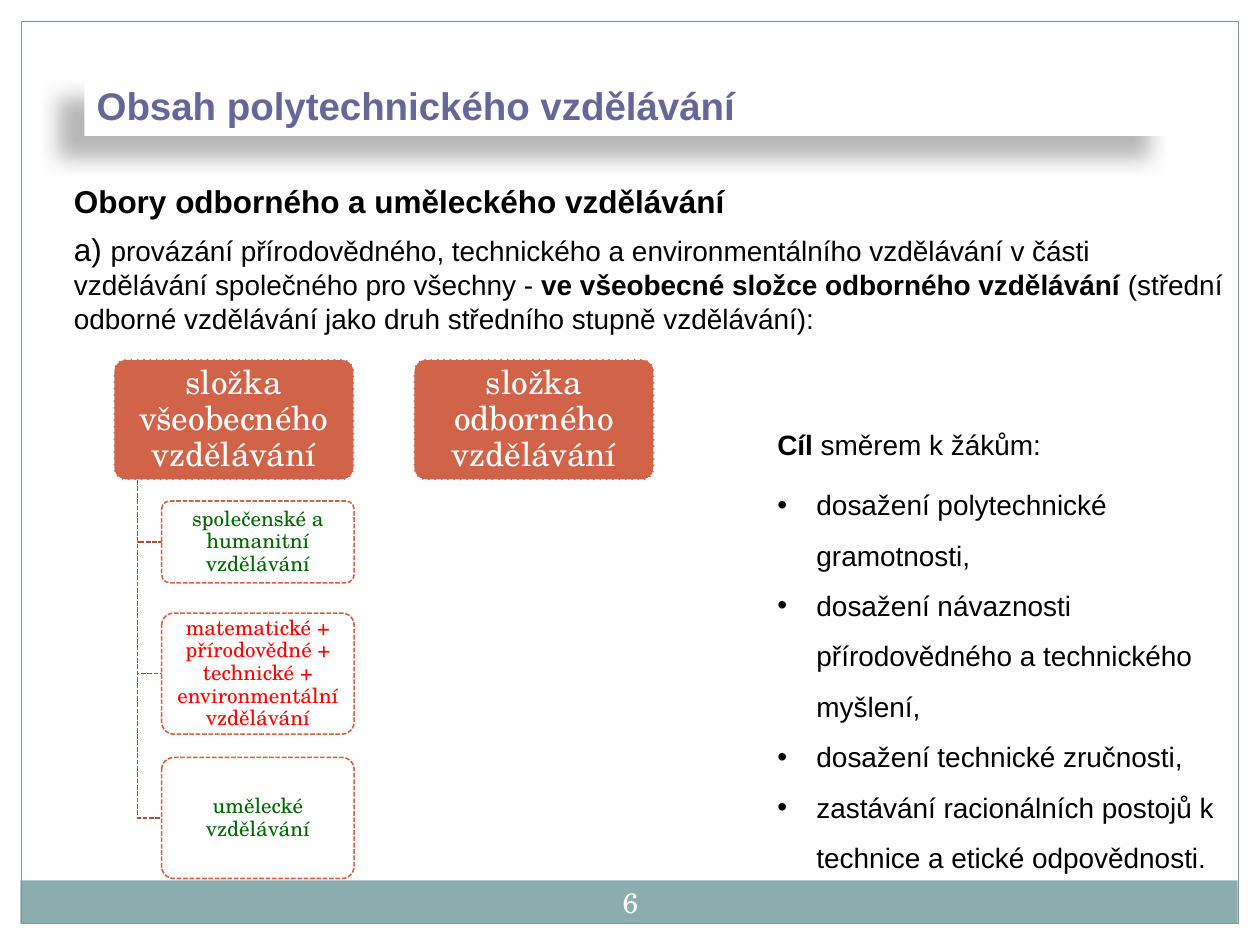
import dataclasses

import lxml.etree
import pptx
import pptx.dml.color
import pptx.enum.dml
import pptx.enum.shapes
import pptx.enum.text
import pptx.oxml.ns
import pptx.util

Cm = pptx.util.Cm
Pt = pptx.util.Pt
SHAPES = pptx.enum.shapes.MSO_SHAPE
ALIGN = pptx.enum.text.PP_ALIGN
ANCHOR = pptx.enum.text.MSO_ANCHOR
DASH = pptx.enum.dml.MSO_LINE.SQUARE_DOT
qn = pptx.oxml.ns.qn


@dataclasses.dataclass(frozen=True)
class Theme:
    sans: str = "Arial"
    serif: str = "TeX Gyre Schola"
    white: str = "FFFFFF"
    ink: str = "000000"
    title: str = "666699"
    band: str = "8CADAE"
    frame: str = "7C999A"
    accent: str = "D16349"
    branch: str = "A74F3A"
    general: str = "006600"
    highlight: str = "FF0000"
    title_size: int = 22
    heading_size: int = 18
    body_size: int = 16
    component_size: int = 19
    subject_size: int = 12


THEME = Theme()


def rgb(value):
    return pptx.dml.color.RGBColor.from_string(value)


def paint(shape, fill=None, line=None, width=0.75, dash=None):
    shape.shadow.inherit = False
    if fill:
        shape.fill.solid()
        shape.fill.fore_color.rgb = rgb(fill)
    else:
        shape.fill.background()
    if line:
        shape.line.color.rgb = rgb(line)
        shape.line.width = Pt(width)
        shape.line.dash_style = dash
    else:
        shape.line.fill.background()


def add_panel(slide, box, **look):
    panel = slide.shapes.add_shape(SHAPES.RECTANGLE, *map(Cm, box))
    paint(panel, **look)
    return panel


def set_frame(shape, anchor=ANCHOR.TOP, margins=(0.25, 0.13)):
    frame = shape.text_frame
    frame.word_wrap = True
    frame.vertical_anchor = anchor
    frame.margin_left = frame.margin_right = Cm(margins[0])
    frame.margin_top = frame.margin_bottom = Cm(margins[1])
    return frame


def write(paragraph, pieces, font, color, align=ALIGN.LEFT):
    paragraph.alignment = align
    for text, size, bold in pieces:
        run = paragraph.add_run()
        run.text = text
        run.font.name = font
        run.font.size = Pt(size)
        run.font.bold = bold
        run.font.color.rgb = rgb(color)


def cast_shadow(shape, color, opacity, blur, distance, angle):
    effects = shape._element.spPr.find(qn("a:effectLst"))
    shadow = lxml.etree.SubElement(
        effects, qn("a:outerShdw"), blurRad=str(Pt(blur)), dist=str(Pt(distance)),
        dir=str(angle * 60000), algn="ctr", rotWithShape="0")
    tint = lxml.etree.SubElement(shadow, qn("a:srgbClr"), val=color)
    lxml.etree.SubElement(tint, qn("a:alpha"), val=str(opacity * 1000))


def add_bullet(paragraph, indent):
    properties = paragraph._p.get_or_add_pPr()
    properties.set("marL", str(Cm(indent)))
    properties.set("indent", str(-Cm(indent)))
    lxml.etree.SubElement(properties, qn("a:buFont"), typeface=THEME.sans)
    lxml.etree.SubElement(properties, qn("a:buChar"), char="•")


def add_card(slide, box, text, size, color, fill, line, margins, opacity=100):
    card = slide.shapes.add_shape(SHAPES.ROUNDED_RECTANGLE, *map(Cm, box))
    card.adjustments[0] = 0.1
    paint(card, fill, line, 0.9, DASH)
    if opacity < 100:
        tint = card._element.spPr.find(qn("a:solidFill")).find(qn("a:srgbClr"))
        lxml.etree.SubElement(tint, qn("a:alpha"), val=str(opacity * 1000))
    paragraph = set_frame(card, ANCHOR.MIDDLE, margins).paragraphs[0]
    paragraph.line_spacing = 0.9
    write(paragraph, [(text, size, False)], THEME.serif, color, ALIGN.CENTER)


def add_branch(slide, trunk_x, top, end_x, end_y):
    builder = slide.shapes.build_freeform(Cm(trunk_x), Cm(top))
    builder.add_line_segments(
        [(Cm(trunk_x), Cm(end_y)), (Cm(end_x), Cm(end_y))], close=False)
    paint(builder.convert_to_shape(), line=THEME.branch, width=0.9, dash=DASH)


def add_page_frame(slide, number):
    add_panel(slide, (0.41, 17.75, 24.54, 0.87), fill=THEME.band)
    add_panel(slide, (0.43, 0.43, 24.54, 18.19), line=THEME.frame)
    page = slide.shapes.add_textbox(Cm(11.86), Cm(17.58), Cm(1.7), Cm(1.22))
    paragraph = set_frame(page, ANCHOR.MIDDLE, (0.13, 0.13)).paragraphs[0]
    write(paragraph, [(number, THEME.body_size, False)],
          THEME.serif, THEME.white, ALIGN.CENTER)


def add_intro(slide):
    intro = add_panel(slide, (1.24, 3.53, 23.67, 4.34),
                      fill=THEME.white, line=THEME.white)
    frame = set_frame(intro)
    heading = frame.paragraphs[0]
    heading.space_after = Pt(6)
    write(heading, [("Obory odborného a uměleckého vzdělávání",
                     THEME.heading_size, True)], THEME.sans, THEME.ink)
    size = THEME.body_size
    write(frame.add_paragraph(), [
        ("a) ", THEME.heading_size, False),
        ("provázání přírodovědného, technického a environmentálního vzdělávání "
         "v části vzdělávání společného pro všechny - ", size, False),
        ("ve všeobecné složce odborného vzdělávání", size, True),
        (" (střední odborné vzdělávání jako druh středního stupně vzdělávání):",
         size, False),
    ], THEME.sans, THEME.ink)


def add_title(slide):
    title = add_panel(slide, (1.7, 1.52, 22, 1.22), fill=THEME.white)
    cast_shadow(title, THEME.ink, 28, 11.8, 19.7, 141)
    paragraph = set_frame(title).paragraphs[0]
    paragraph.space_before = Pt(6)
    write(paragraph, [("Obsah polytechnického vzdělávání", THEME.title_size, True)],
          THEME.sans, THEME.title)


def add_components(slide):
    left, top, width, height, step = 2.29, 7.24, 4.85, 2.44, 6.05
    components = ("složka všeobecného vzdělávání", "složka odborného vzdělávání")
    for column, text in enumerate(components):
        add_card(slide, (left + column * step, top, width, height), text,
                 THEME.component_size, THEME.white, THEME.accent, THEME.white,
                 (0.1, 0.07))

    trunk_x = left + width / 10
    subject_x = left + width / 5
    subjects = (
        ("společenské a humanitní vzdělávání", 10.1, 1.65, THEME.general),
        ("matematické + přírodovědné + technické + environmentální vzdělávání",
         12.36, height, THEME.highlight),
        ("umělecké vzdělávání", 15.27, height, THEME.general),
    )
    for text, subject_y, subject_height, color in subjects:
        add_branch(slide, trunk_x, top + height, subject_x,
                   subject_y + subject_height / 2)
        add_card(slide, (subject_x, subject_y, width * 0.8, subject_height), text,
                 THEME.subject_size, color, THEME.white, THEME.accent,
                 (0.07, 0.05), opacity=90)


def add_goals(slide):
    goals = slide.shapes.add_textbox(Cm(15.42), Cm(8.48), Cm(10.39), Cm(9.37))
    frame = set_frame(goals)
    frame.auto_size = pptx.enum.text.MSO_AUTO_SIZE.SHAPE_TO_FIT_TEXT
    size = THEME.body_size
    lead = frame.paragraphs[0]
    lead.space_after = Pt(6)
    write(lead, [("Cíl", size, True), (" směrem k žákům:", size, False)],
          THEME.sans, THEME.ink)
    for goal in (
        "dosažení polytechnické gramotnosti,",
        "dosažení návaznosti přírodovědného a technického myšlení,",
        "dosažení technické zručnosti,",
        "zastávání racionálních postojů k technice a etické odpovědnosti.",
    ):
        paragraph = frame.add_paragraph()
        paragraph.line_spacing = 1.5
        write(paragraph, [(goal, size, False)], THEME.sans, THEME.ink)
        add_bullet(paragraph, 0.79)


def main():
    presentation = pptx.Presentation()
    presentation.slide_width = Cm(25.4)
    presentation.slide_height = Cm(19.05)
    slide = presentation.slides.add_slide(presentation.slide_layouts[6])
    add_page_frame(slide, "6")
    add_intro(slide)
    add_title(slide)
    add_components(slide)
    add_goals(slide)
    presentation.save("out.pptx")


if __name__ == "__main__":
    main()
